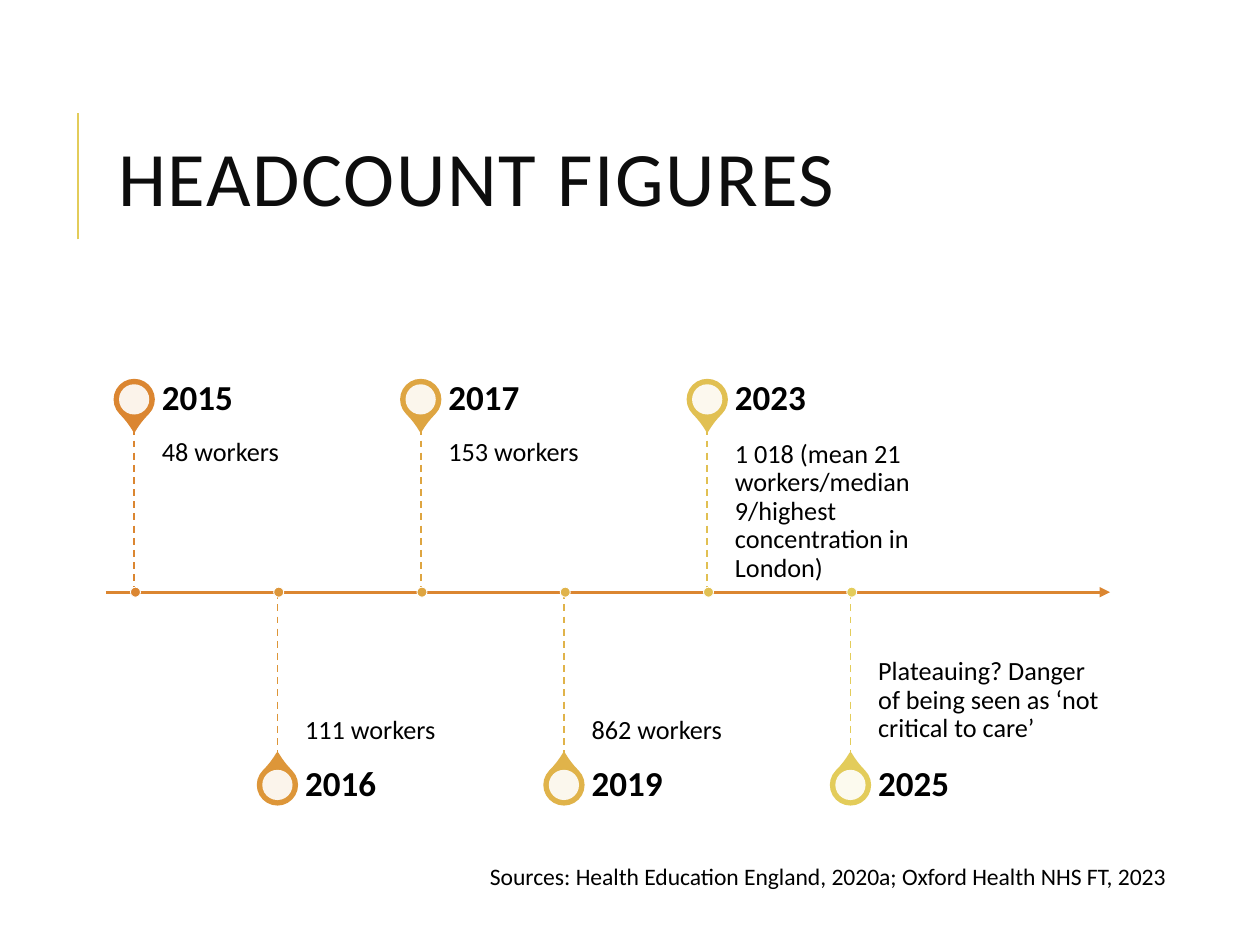
from lxml import etree
from pptx import Presentation
from pptx.dml.color import RGBColor
from pptx.enum.dml import MSO_LINE
from pptx.enum.shapes import MSO_CONNECTOR, MSO_SHAPE
from pptx.enum.text import MSO_ANCHOR
from pptx.oxml.ns import qn
from pptx.util import Inches, Pt

TOP, MIDDLE, BOTTOM = MSO_ANCHOR.TOP, MSO_ANCHOR.MIDDLE, MSO_ANCHOR.BOTTOM
STRAIGHT, DASH = MSO_CONNECTOR.STRAIGHT, MSO_LINE.DASH
TEARDROP, OVAL = MSO_SHAPE.TEAR, MSO_SHAPE.OVAL

# Content
TITLE = "HEADCOUNT FIGURES"
SOURCES = "Sources: Health Education England, 2020a; Oxford Health NHS FT, 2023"
EVENTS = [
    ("2015", "48 workers", "DB8631"),
    ("2016", "111 workers", "DD9639"),
    ("2017", "153 workers", "DEA541"),
    ("2019", "862 workers", "E0B34A"),
    ("2023", "1 018 (mean 21 workers/median 9/highest concentration in London)", "E1C052"),
    ("2025", "Plateauing? Danger of being seen as ‘not critical to care’", "E3CC5A"),
]
COLORS = {"title": "0D0D0D", "text": "000000", "white": "FFFFFF",
          "axis": "DB8631", "accent": "E3CC5A"}
FONT = "Calibri"

# Timeline geometry in inches
AXIS_Y, AXIS_LEFT, AXIS_RIGHT = 4.7, 0.84, 8.81
FIRST_X, STEP = 1.065, 1.137
STEM, YEAR_H, TEXT_W, TEXT_GAP = 1.3, 0.46, 1.84, 0.22
PIN, HOLE, DOT = 0.31, 0.24, 0.08

prs = Presentation()
prs.slide_width, prs.slide_height = Inches(10), Inches(7.5)
s = prs.slides.add_slide(prs.slide_layouts[6])


def add_line(x1, y1, x2, y2, color, width, dash=None):
    line = s.shapes.add_connector(STRAIGHT, *map(Inches, (x1, y1, x2, y2)))
    line.line.color.rgb = RGBColor.from_string(color)
    line.line.width = Pt(width)
    if dash:
        line.line.dash_style = dash
    etree.SubElement(line._element.spPr, qn("a:effectLst"))
    return line


def add_centered(kind, x, y, size, fill, line=None, width=0):
    sp = s.shapes.add_shape(kind, *map(Inches, (x - size / 2, y - size / 2, size, size)))
    sp.shadow.inherit = False
    sp.fill.solid()
    sp.fill.fore_color.rgb = RGBColor.from_string(fill)
    if line:
        sp.line.color.rgb = RGBColor.from_string(line)
        sp.line.width = Pt(width)
    else:
        sp.line.fill.background()
    return sp


def add_text(box, text, size, color=COLORS["text"], bold=False, anchor=TOP,
             insets=(0.1, 0.05, 0.1, 0.05), spacing=None, wrap=True):
    tf = s.shapes.add_textbox(*map(Inches, box)).text_frame
    tf.word_wrap = wrap
    tf.vertical_anchor = anchor
    tf.margin_left, tf.margin_top, tf.margin_right, tf.margin_bottom = map(Inches, insets)
    p = tf.paragraphs[0]
    if spacing:
        p.line_spacing = spacing
    r = p.add_run()
    r.text = text
    r.font.name, r.font.size, r.font.bold = FONT, Pt(size), bold
    r.font.color.rgb = RGBColor.from_string(color)
    return r


# Title with accent rule
add_line(0.62, 1.9, 0.62, 0.9, COLORS["accent"], 1.5)
title = add_text((0.84, 0.64, 7.97, 1.64), TITLE, 44, COLORS["title"],
                 anchor=MIDDLE, spacing=0.8)
title._r.get_or_add_rPr().set("spc", "100")

# Timeline axis with arrowhead
axis = add_line(AXIS_LEFT, AXIS_Y, AXIS_RIGHT, AXIS_Y, COLORS["axis"], 1.5)
etree.SubElement(axis.line._get_or_add_ln(), qn("a:tailEnd"), type="triangle")

# Events alternate above and below the axis
for i, (year, note, color) in enumerate(EVENTS):
    x = FIRST_X + i * STEP
    above = i % 2 == 0
    side = -1 if above else 1
    stem_end = AXIS_Y + side * STEM
    pin_y = stem_end + side * YEAR_H / 2

    pin = add_centered(TEARDROP, x, pin_y, PIN, color, color, 1.25)
    pin.adjustments[0] = 1.15
    pin.rotation = 135 if above else 315
    hole = add_centered(OVAL, x, pin_y, HOLE, COLORS["white"])
    rgb = hole._element.spPr.find(qn("a:solidFill"))[0]
    etree.SubElement(rgb, qn("a:alpha"), val="90000")

    text_x = x + TEXT_GAP
    add_text((text_x, min(AXIS_Y, stem_end), TEXT_W, STEM), note, 15,
             anchor=TOP if above else BOTTOM, spacing=0.9,
             insets=(0, 0.1, 0.1, 0.16) if above else (0, 0.16, 0, 0.1))
    add_text((text_x, pin_y - YEAR_H / 2, TEXT_W, YEAR_H), year, 20, bold=True,
             anchor=MIDDLE, insets=(0, 0, 0.14, 0), spacing=0.9)

    add_line(x, min(AXIS_Y, stem_end), x, max(AXIS_Y, stem_end), color, 1, DASH)
    add_centered(OVAL, x + 0.01, AXIS_Y, DOT, color, COLORS["white"], 0.5)

# Sources
add_text((3.79, 6.79, 5.66, 0.33), SOURCES, 13.5, wrap=False)

prs.save("out.pptx")
